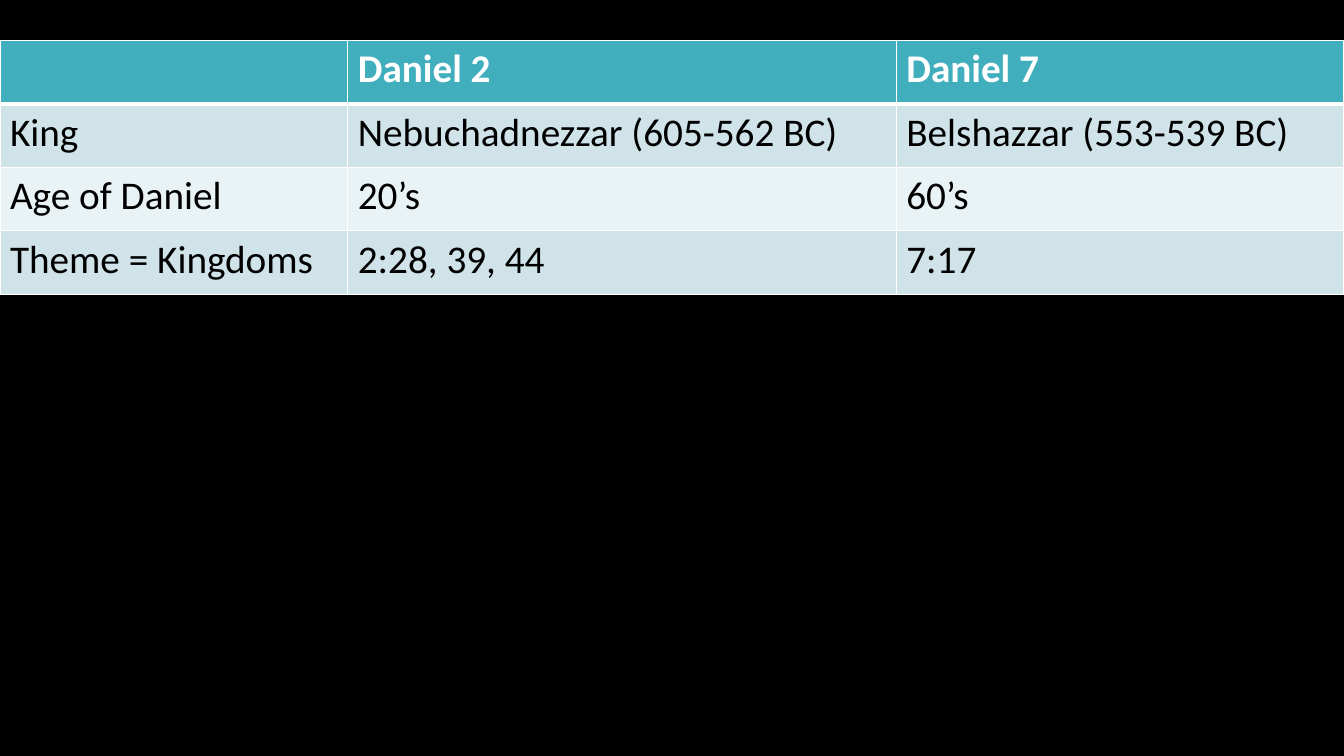
import pptx
import pptx.util
import pptx.dml.color
import pptx.oxml.ns
from lxml import etree

Inches, Pt = pptx.util.Inches, pptx.util.Pt
RGB = pptx.dml.color.RGBColor.from_string
COLORS = {"back": "000000", "head": "41AEBD", "dark": "CFE3E8",
          "light": "E9F2F4", "white": "FFFFFF", "text": "000000"}


def add_edge(cell, side, width):
    props = cell._tc.get_or_add_tcPr()
    line = etree.SubElement(props, pptx.oxml.ns.qn("a:ln" + side), w=str(Pt(width)))
    fill = etree.SubElement(line, pptx.oxml.ns.qn("a:solidFill"))
    etree.SubElement(fill, pptx.oxml.ns.qn("a:srgbClr"), val=COLORS["white"])


# Slide
deck = pptx.Presentation()
deck.slide_width, deck.slide_height = Inches(13.33), Inches(7.5)
slide = deck.slides.add_slide(deck.slide_layouts[6])
slide.background.fill.solid()
slide.background.fill.fore_color.rgb = RGB(COLORS["back"])

# Table content
ROWS = [
    ["", "Daniel 2", "Daniel 7"],
    ["King", "Nebuchadnezzar (605-562 BC)", "Belshazzar (553-539 BC)"],
    ["Age of Daniel", "20’s", "60’s"],
    ["Theme = Kingdoms", "2:28, 39, 44", "7:17"],
]
WIDTHS = [3.45, 5.44, 4.44]
HIGH = 0.63

# Table grid
table = slide.shapes.add_table(
    len(ROWS), len(WIDTHS), Inches(0), Inches(0.4),
    Inches(sum(WIDTHS)), Inches(HIGH * len(ROWS))).table
for col, width in zip(table.columns, WIDTHS):
    col.width = Inches(width)
for row in table.rows:
    row.height = Inches(HIGH)

# Cells: header row, then alternating bands
for r, words in enumerate(ROWS):
    head = r == 0
    band = "head" if head else "dark" if r % 2 else "light"
    for c, word in enumerate(words):
        cell = table.cell(r, c)
        for side in "LRTB":
            thick = (r, side) in [(0, "B"), (1, "T")]
            add_edge(cell, side, 3 if thick else 1)
        cell.fill.solid()
        cell.fill.fore_color.rgb = RGB(COLORS[band])
        if word:
            run = cell.text_frame.paragraphs[0].add_run()
            run.text = word
            run.font.name = "Calibri"
            run.font.size = Pt(28)
            run.font.bold = head
            run.font.color.rgb = RGB(COLORS["white" if head else "text"])

deck.save("out.pptx")
